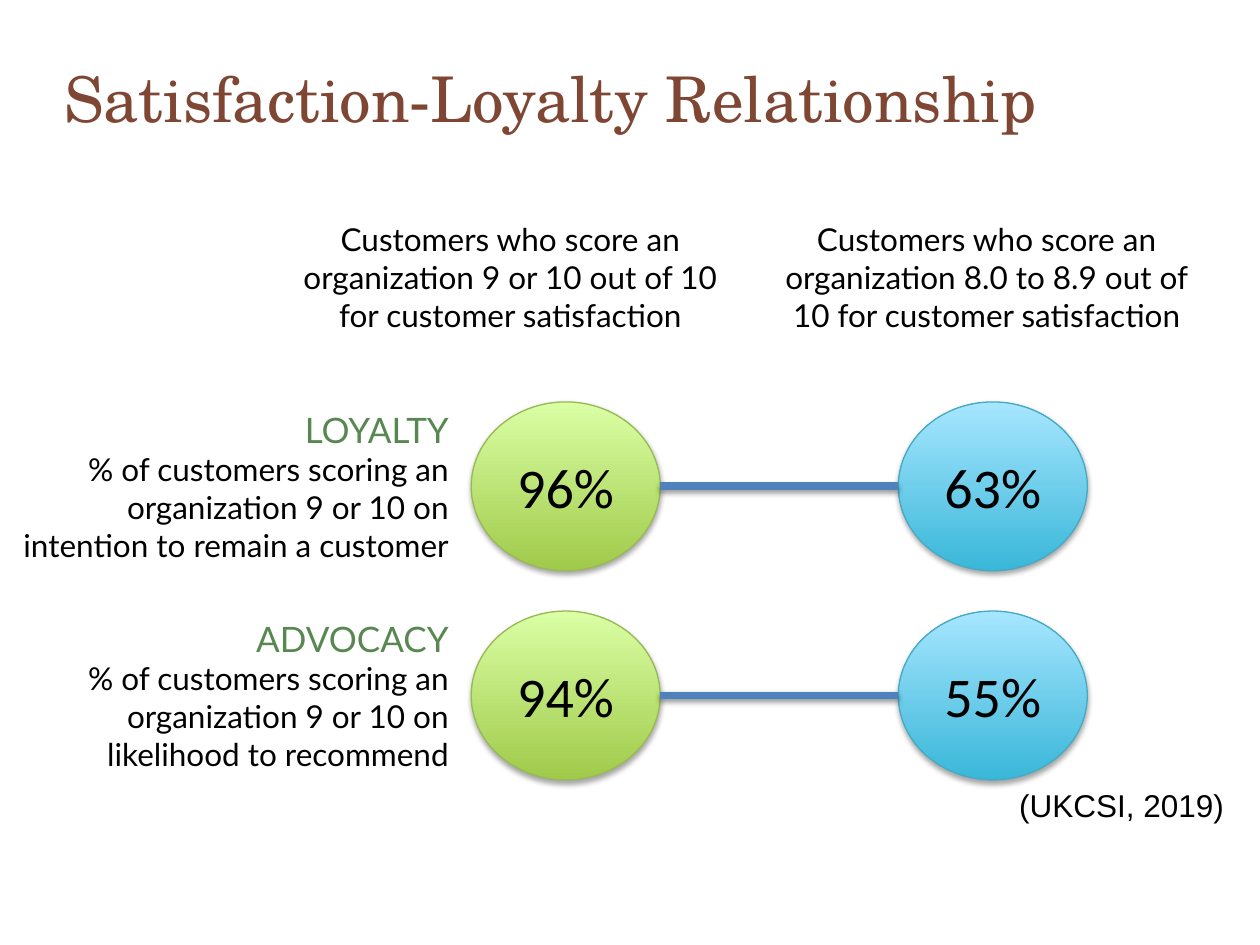
from lxml import etree
from pptx import Presentation
from pptx.dml.color import RGBColor
from pptx.enum.shapes import MSO_CONNECTOR, MSO_SHAPE
from pptx.enum.text import MSO_ANCHOR, PP_ALIGN
from pptx.oxml.ns import qn
from pptx.util import Inches, Pt

OVAL, STRAIGHT = MSO_SHAPE.OVAL, MSO_CONNECTOR.STRAIGHT
TOP, MIDDLE = MSO_ANCHOR.TOP, MSO_ANCHOR.MIDDLE
LEFT, CENTER, RIGHT = PP_ALIGN.LEFT, PP_ALIGN.CENTER, PP_ALIGN.RIGHT

BLACK = RGBColor(0x00, 0x00, 0x00)
BROWN = RGBColor(0x7F, 0x46, 0x33)
HEADING_GREEN = RGBColor(0x59, 0x87, 0x52)
LINE_BLUE = RGBColor(0x4F, 0x81, 0xBD)
# Bottom colour, top colour, outline
GREEN = (RGBColor(0xA0, 0xCA, 0x4A), RGBColor(0xDA, 0xFF, 0xA5), RGBColor(0x98, 0xB9, 0x55))
BLUE = (RGBColor(0x39, 0xB7, 0xD8), RGBColor(0xA7, 0xE6, 0xFF), RGBColor(0x46, 0xAA, 0xC5))

CIRCLE_W, CIRCLE_H = 1.5, 1.34
TEXT_W = 3.62
HIGH_X, LOWER_X = 3.74, 7.13
FIRST_ROW_Y, ROW_STEP = 3.19, 1.66

COLUMNS = [
    (2.24, "Customers who score an organization 9 or 10 out of 10 for customer satisfaction"),
    (6.02, "Customers who score an organization 8.0 to 8.9 out of 10 for customer satisfaction"),
]
ROWS = [
    ("LOYALTY", "% of customers scoring an organization 9 or 10 on intention to remain a customer",
     "96%", "63%"),
    ("ADVOCACY", "% of customers scoring an organization 9 or 10 on likelihood to recommend",
     "94%", "55%"),
]


def style(p, size, font, color, align):
    p.alignment = align
    for r in p.runs:
        r.font.size = Pt(size)
        r.font.name = font
        r.font.color.rgb = color


def add_shadow(s, opacity, distance):
    """Soft black shadow straight below; call after the line is set."""
    sp_pr = s._element.spPr
    for old in sp_pr.findall(qn("a:effectLst")):
        sp_pr.remove(old)
    effects = etree.SubElement(sp_pr, qn("a:effectLst"))
    shadow = etree.SubElement(effects, qn("a:outerShdw"), blurRad=str(Pt(3.1)),
                              dist=str(Pt(distance)), dir="5400000", rotWithShape="0")
    color = etree.SubElement(shadow, qn("a:srgbClr"), val=str(BLACK))
    etree.SubElement(color, qn("a:alpha"), val=str(opacity * 1000))


def add_title(slide, text):
    s = slide.shapes.title
    s.left, s.top, s.width, s.height = Inches(0.51), Inches(0.49), Inches(7.8), Inches(0.67)
    tf = s.text_frame
    tf.text = text
    tf.vertical_anchor = TOP
    tf.margin_left = tf.margin_top = tf.margin_right = tf.margin_bottom = 0
    p = tf.paragraphs[0]
    p.line_spacing = Pt(42)
    style(p, 36, "TeX Gyre Schola", BROWN, LEFT)


def add_text(slide, x, y, w, h, paragraphs, align):
    """Each paragraph is (text, size, font, colour)."""
    tf = slide.shapes.add_textbox(Inches(x), Inches(y), Inches(w), Inches(h)).text_frame
    tf.word_wrap = True
    for i, (text, size, font, color) in enumerate(paragraphs):
        p = tf.add_paragraph() if i else tf.paragraphs[0]
        p.text = text
        style(p, size, font, color, align)


def add_circle(slide, x, y, text, colors):
    s = slide.shapes.add_shape(OVAL, Inches(x), Inches(y), Inches(CIRCLE_W), Inches(CIRCLE_H))
    bottom, top, outline = colors
    s.fill.gradient()
    s.fill.gradient_angle = 90
    for stop, color, position in zip(s.fill.gradient_stops, (bottom, top), (0, 1)):
        stop.color.rgb = color
        stop.position = position
    s.line.color.rgb = outline
    s.line.width = Pt(0.75)
    add_shadow(s, 35, 1.8)
    tf = s.text_frame
    tf.text = text
    tf.vertical_anchor = MIDDLE
    style(tf.paragraphs[0], 32, "Calibri", BLACK, CENTER)


def add_link(slide, x1, x2, y):
    s = slide.shapes.add_connector(STRAIGHT, Inches(x1), Inches(y), Inches(x2), Inches(y))
    s.line.color.rgb = LINE_BLUE
    s.line.width = Pt(4.5)
    add_shadow(s, 38, 1.6)


def main():
    prs = Presentation()
    prs.slide_width, prs.slide_height = Inches(10), Inches(7.5)
    slide = prs.slides.add_slide(prs.slide_layouts[5])
    add_title(slide, "Satisfaction-Loyalty Relationship")

    # Column headings
    for x, text in COLUMNS:
        add_text(slide, x, 1.7, TEXT_W, 1.01, [(text, 18, "Lato", BLACK)], CENTER)

    # One row per measure: label, two linked circles
    for i, (heading, detail, high, lower) in enumerate(ROWS):
        y = FIRST_ROW_Y + i * ROW_STEP
        add_circle(slide, HIGH_X, y, high, GREEN)
        add_circle(slide, LOWER_X, y, lower, BLUE)
        add_link(slide, HIGH_X + CIRCLE_W, LOWER_X, y + CIRCLE_H / 2)
        add_text(slide, 0.04, y, TEXT_W, 1.35,
                 [(heading, 20, "Lato", HEADING_GREEN), (detail, 18, "Lato", BLACK)], RIGHT)

    # Source
    add_text(slide, 7.99, 6.19, 2.01, 0.4, [("(UKCSI, 2019)", 18, "Arial", BLACK)], LEFT)
    prs.save("out.pptx")


if __name__ == "__main__":
    main()
